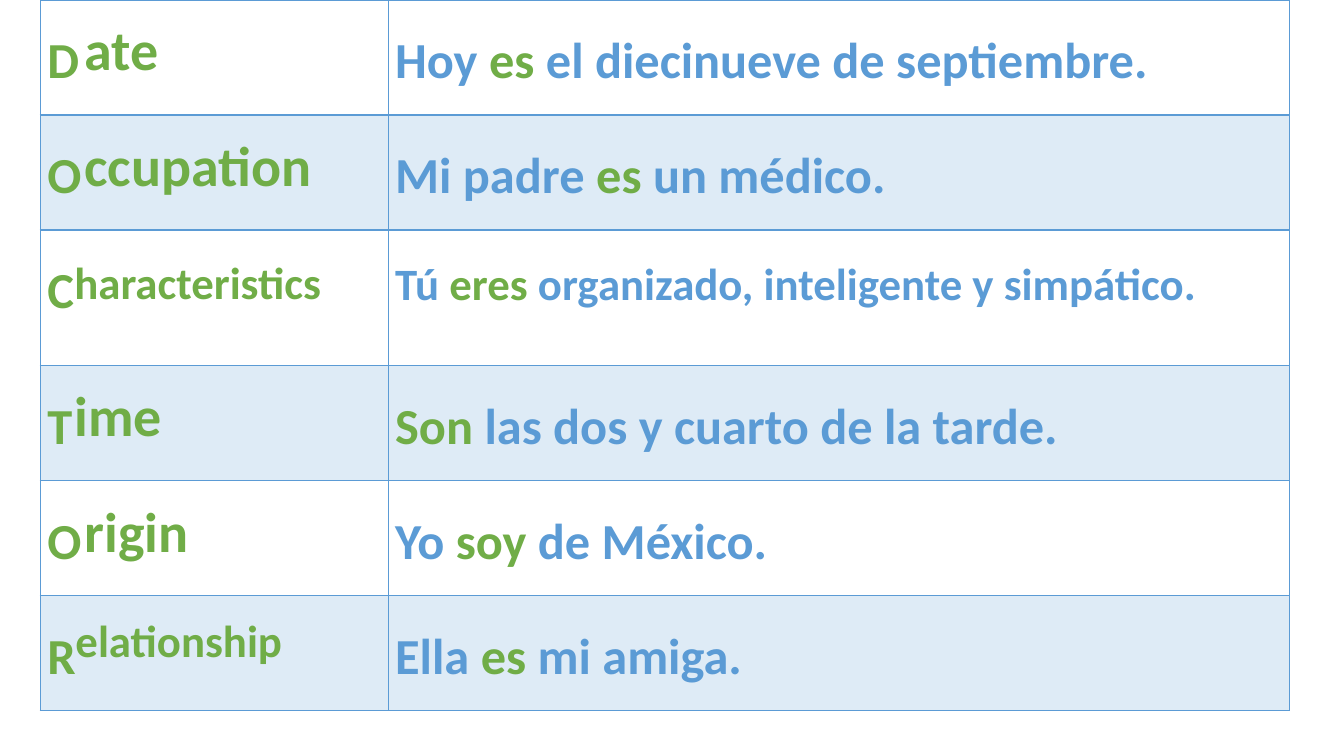
from dataclasses import dataclass
from itertools import accumulate

from lxml import etree
from pptx import Presentation
from pptx import util as u
from pptx.dml.color import RGBColor
from pptx.enum import text
from pptx.oxml.ns import qn


@dataclass(frozen=True)
class Theme:
    font: str = "Calibri"
    green: str = "70AD47"
    blue: str = "5B9BD5"
    band_opacity: int = 20
    initial_size: int = 36
    thin_line: int = 1
    header_line: int = 2


@dataclass(frozen=True)
class Use:
    """One use of "ser"; left, rise, width and height are percentages of the slide."""
    initial: str
    ending: str
    before: str
    verb: str
    after: str
    left: float
    rise: float
    width: float
    height: float = 15.22
    ending_size: int = 40
    sentence_size: int = 36


THEME = Theme()
SLIDE_WIDTH, SLIDE_HEIGHT = u.Inches(13.33), u.Inches(7.5)
TABLE_LEFT = 3.0
COLUMNS = (25.88, 67.07)
USES = (
    Use("D", "ate", "Hoy ", "es", " el diecinueve de septiembre.", 5.55, 1.33, 14.03),
    Use("O", "ccupation", "Mi padre ", "es", " un médico.", 5.55, 1.33, 18.68),
    Use("C", "haracteristics", "Tú ", "eres", " organizado, inteligente y simpático.",
        4.8, 2.63, 20.26, height=17.87, ending_size=32, sentence_size=32),
    Use("T", "ime", "", "Son", " las dos y cuarto de la tarde.", 4.8, 1.42, 14.03),
    Use("O", "rigin", "Yo ", "soy", " de México.", 5.55, 1.54, 18.68),
    Use("R", "elationship", "Ella ", "es", " mi amiga.", 4.88, 1.65, 18.08, ending_size=32),
)


def across(percent: float) -> int:
    return u.Emu(round(SLIDE_WIDTH * percent / 100))


def down(percent: float) -> int:
    return u.Emu(round(SLIDE_HEIGHT * percent / 100))


def write(paragraph, size: int, pieces: list[tuple[str, str]]) -> None:
    """Fill a paragraph with bold (wording, colour) runs."""
    font = paragraph.font
    font.name, font.size, font.bold = THEME.font, u.Pt(size), True
    for wording, colour in pieces:
        if wording:
            run = paragraph.add_run()
            run.text = wording
            run.font.color.rgb = RGBColor.from_string(colour)


def add_borders(cell, row: int) -> None:
    header_side = {0: "lnB", 1: "lnT"}.get(row)
    properties = cell._tc.get_or_add_tcPr()
    for side in ("lnL", "lnR", "lnT", "lnB"):
        width = THEME.header_line if side == header_side else THEME.thin_line
        line = etree.SubElement(properties, qn(f"a:{side}"), w=str(u.Pt(width)))
        fill = etree.SubElement(line, qn("a:solidFill"))
        etree.SubElement(fill, qn("a:srgbClr"), val=THEME.blue)


def fill_band(cell, row: int) -> None:
    if row % 2 == 0:
        cell.fill.background()
        return
    cell.fill.solid()
    cell.fill.fore_color.rgb = RGBColor.from_string(THEME.blue)
    colour = cell._tc.tcPr.find(qn("a:solidFill"))[0]
    etree.SubElement(colour, qn("a:alpha"), val=str(THEME.band_opacity * 1000))


def add_uses_table(slide) -> None:
    heights = [use.height for use in USES]
    table = slide.shapes.add_table(len(USES), len(COLUMNS), across(TABLE_LEFT), 0,
                                   across(sum(COLUMNS)), down(sum(heights))).table
    table.first_row = table.horz_banding = False
    for column, width in zip(table.columns, COLUMNS):
        column.width = across(width)
    for index, use in enumerate(USES):
        table.rows[index].height = down(use.height)
        contents = (
            (THEME.initial_size, [(use.initial, THEME.green)]),
            (use.sentence_size, [(use.before, THEME.blue), (use.verb, THEME.green),
                                 (use.after, THEME.blue)]),
        )
        for cell, (size, pieces) in zip(table.rows[index].cells, contents):
            cell.margin_left = cell.margin_right = u.Inches(0.07)
            cell.margin_top = cell.margin_bottom = 0
            add_borders(cell, index)
            fill_band(cell, index)
            paragraph = cell.text_frame.paragraphs[0]
            paragraph.line_spacing = 1.5
            write(paragraph, size, pieces)


def add_ending(slide, use: Use, row_top: float) -> None:
    """Place the rest of the word beside its initial."""
    height = u.Pt(use.ending_size * 1.2) + u.Inches(0.1)
    box = slide.shapes.add_textbox(across(use.left), down(row_top + use.rise),
                                   across(use.width), height)
    frame = box.text_frame
    frame.word_wrap = True
    frame.auto_size = text.MSO_AUTO_SIZE.SHAPE_TO_FIT_TEXT
    write(frame.paragraphs[0], use.ending_size, [(use.ending, THEME.green)])


def main() -> None:
    presentation = Presentation()
    presentation.slide_width, presentation.slide_height = SLIDE_WIDTH, SLIDE_HEIGHT
    slide = presentation.slides.add_slide(presentation.slide_layouts[6])
    add_uses_table(slide)
    row_tops = accumulate((use.height for use in USES), initial=0)
    for use, row_top in zip(USES, row_tops):
        add_ending(slide, use, row_top)
    presentation.save("out.pptx")


if __name__ == "__main__":
    main()
